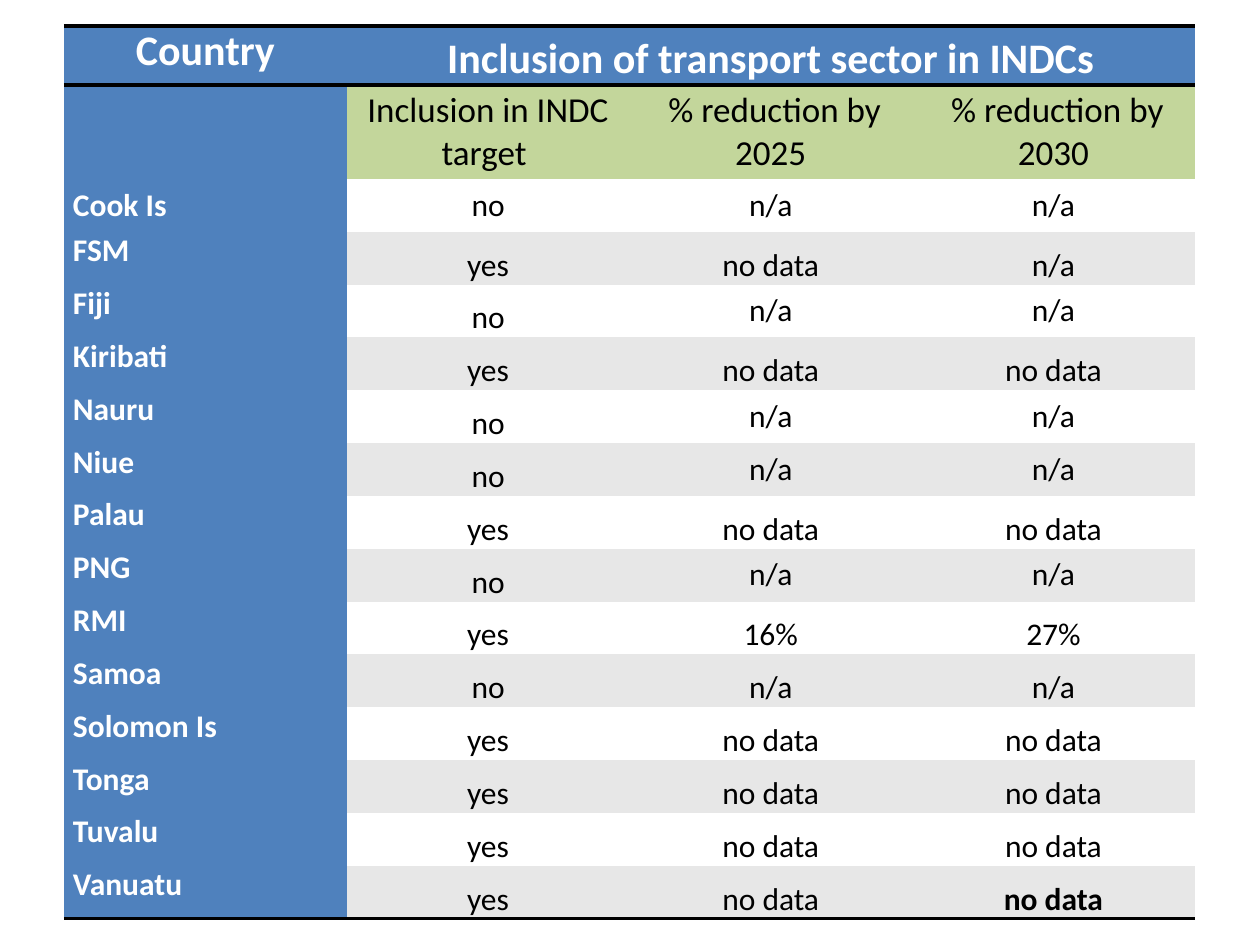
from lxml.etree import SubElement
from pptx import Presentation
from pptx.dml.color import RGBColor
from pptx.enum.text import MSO_ANCHOR as ANCHOR, PP_ALIGN as ALIGN
from pptx.oxml.ns import qn
from pptx.util import Pt

PX = 914400 // 126
FONT = "Calibri"
NO_STYLE_NO_GRID = "{2D5ABB26-0587-4C30-8999-92F81FD0307C}"
COLORS = {
    "blue": "4F81BD",
    "green": "C3D69B",
    "band": "E7E7E7",
    "white": "FFFFFF",
    "black": "000000",
}
LEFT, TOP, WIDTH, HEIGHT = 64, 26, 1131, 893
TITLE_H, HEADING_H = 59, 94
TOP_A, MID, LOW = ANCHOR.TOP, ANCHOR.MIDDLE, ANCHOR.BOTTOM

HEADINGS = ["Inclusion in INDC target ", " % reduction by 2025", " % reduction by 2030"]
# country, inclusion in target, reduction by 2025, by 2030, anchor of the reductions
COUNTRIES = [
    ("Cook Is", "no", "n/a", "n/a", MID),
    ("FSM", "yes", "no data", "n/a", LOW),
    ("Fiji", "no", "n/a", "n/a", MID),
    ("Kiribati", "yes", "no data", "no data", LOW),
    ("Nauru", "no", "n/a", "n/a", MID),
    ("Niue", "no", "n/a", "n/a", MID),
    ("Palau", "yes", "no data", "no data", LOW),
    ("PNG", "no", "n/a", "n/a", MID),
    ("RMI", "yes", "16%", "27%", LOW),
    ("Samoa", "no", "n/a", "n/a", LOW),
    ("Solomon Is", "yes", "no data", "no data", LOW),
    ("Tonga", "yes", "no data", "no data", LOW),
    ("Tuvalu", "yes", "no data", "no data", LOW),
    ("Vanuatu", "yes", "no data", "no data", LOW),
]


def px(n):
    return round(n * PX)


def rgb(name):
    return RGBColor.from_string(COLORS[name])


def set_cell(cell, text, fill, size=18, color="black", bold=False,
             align=ALIGN.CENTER, anchor=MID):
    cell.fill.solid()
    cell.fill.fore_color.rgb = rgb(fill)
    cell.margin_left = cell.margin_right = px(9)
    cell.margin_top = cell.margin_bottom = 0
    cell.vertical_anchor = anchor
    cell.text = text
    p = cell.text_frame.paragraphs[0]
    p.alignment = align
    for r in p.runs:
        r.font.name = FONT
        r.font.size = Pt(size)
        r.font.bold = bold
        r.font.color.rgb = rgb(color)


def add_rules(cells, sides):
    """Draw black 2 pt borders on the given sides ("T", "B") of the cells."""
    for cell in cells:
        tc_pr = cell._tc.get_or_add_tcPr()
        for i, side in enumerate(sides):
            ln = SubElement(tc_pr, qn(f"a:ln{side}"), w=str(Pt(2)))
            fill = SubElement(ln, qn("a:solidFill"))
            SubElement(fill, qn("a:srgbClr"), val=COLORS["black"])
            tc_pr.insert(i, ln)  # borders come before the cell's fill


def add_table(slide):
    n_rows = len(COUNTRIES) + 2
    frame = slide.shapes.add_table(n_rows, 4, px(LEFT), px(TOP), px(WIDTH), px(HEIGHT))
    table = frame.table
    table.first_row = table.horz_banding = False
    table._tbl.tblPr.find(qn("a:tableStyleId")).text = NO_STYLE_NO_GRID
    for col in table.columns:
        col.width = px(WIDTH / 4)
    country_h = (HEIGHT - TITLE_H - HEADING_H) / len(COUNTRIES)
    heights = [TITLE_H, HEADING_H] + [country_h] * len(COUNTRIES)
    for row, h in zip(table.rows, heights):
        row.height = px(h)
    return table


def fill_headings(table):
    title = dict(fill="blue", size=24, color="white", bold=True)
    set_cell(table.cell(0, 0), "Country", anchor=TOP_A, **title)
    table.cell(0, 1).merge(table.cell(0, 3))
    set_cell(table.cell(0, 1), "Inclusion of transport sector in INDCs", anchor=LOW, **title)
    set_cell(table.cell(1, 0), "", "blue")
    for c, text in enumerate(HEADINGS, 1):
        set_cell(table.cell(1, c), text, "green", size=20)


def fill_countries(table):
    last = len(COUNTRIES) - 1
    for i, (country, inclusion, by_2025, by_2030, anchor) in enumerate(COUNTRIES):
        cells = table.rows[i + 2].cells
        fill = "band" if i % 2 else "white"
        set_cell(cells[0], country, "blue", color="white", bold=True,
                 align=ALIGN.LEFT, anchor=TOP_A if i else MID)
        set_cell(cells[1], inclusion, fill, anchor=LOW if i else MID)
        set_cell(cells[2], by_2025, fill, anchor=anchor)
        set_cell(cells[3], by_2030, fill, bold=i == last, anchor=anchor)


def main():
    prs = Presentation()
    prs.slide_width, prs.slide_height = px(1260), px(945)
    slide = prs.slides.add_slide(prs.slide_layouts[6])
    table = add_table(slide)
    fill_headings(table)
    fill_countries(table)
    add_rules(table.rows[0].cells, "TB")
    add_rules(table.rows[len(table.rows) - 1].cells, "B")
    prs.save("out.pptx")


if __name__ == "__main__":
    main()
